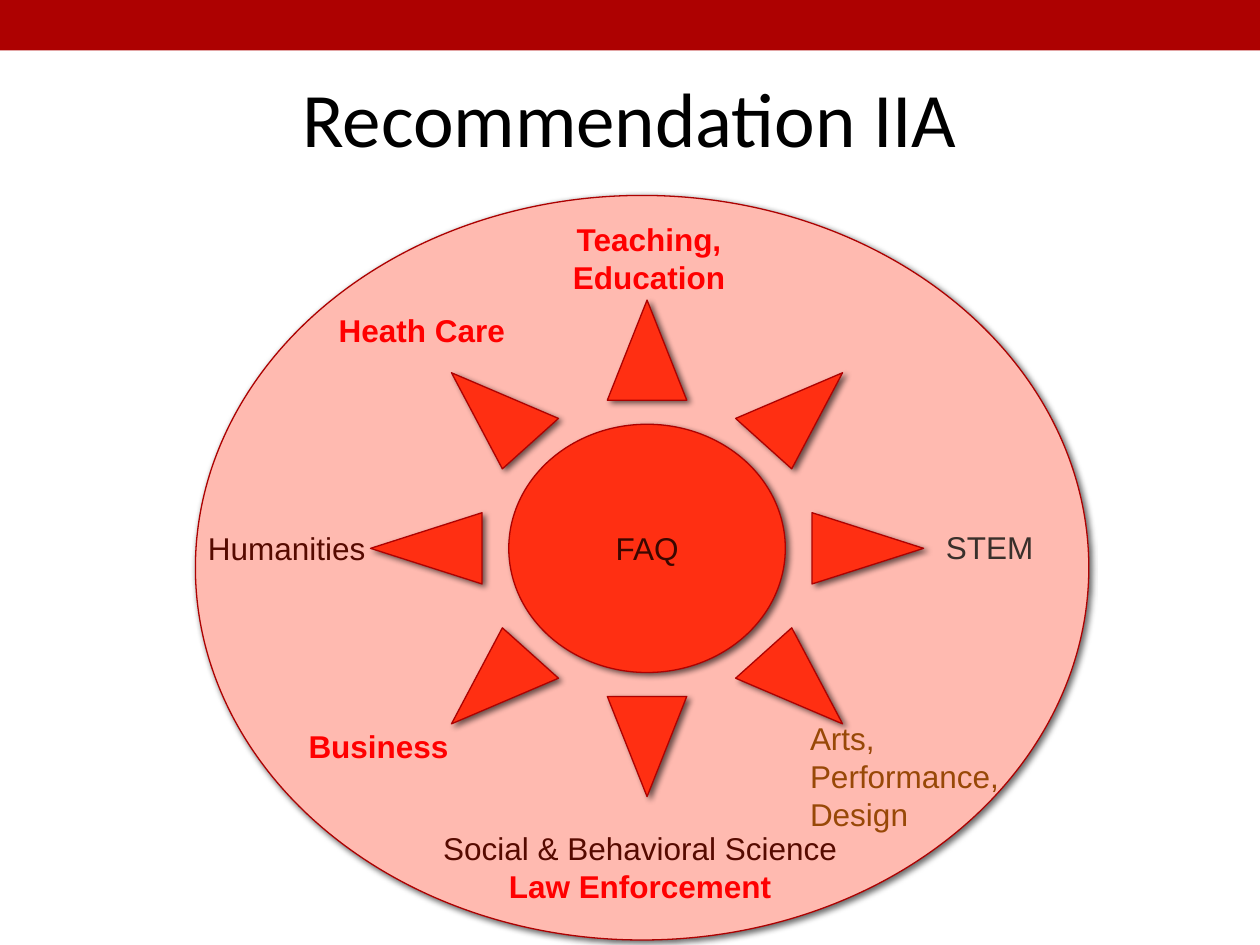
from lxml.etree import SubElement
from pptx import Presentation
from pptx.dml.color import RGBColor
from pptx.enum.shapes import MSO_SHAPE as Shape
from pptx.enum.text import MSO_ANCHOR as Anchor, MSO_AUTO_SIZE as Fit, PP_ALIGN as Align
from pptx.oxml.ns import qn
from pptx.util import Cm, Pt

BLACK = RGBColor(0x00, 0x00, 0x00)
DARK = RGBColor(0xAD, 0x01, 0x01)
PINK = RGBColor(0xFF, 0xBA, 0xB0)
FLAME = RGBColor(0xFF, 0x2F, 0x12)
RED = RGBColor(0xFF, 0x00, 0x00)
MAROON = RGBColor(0x56, 0x0A, 0x00)
DEEP = RGBColor(0x3A, 0x07, 0x00)
GRAY = RGBColor(0x39, 0x30, 0x2B)
BROWN = RGBColor(0x98, 0x48, 0x07)

TITLE = "Recommendation IIA"
# Each line: text, colour, bold
HEALTH = [("Heath Care", RED, True)]
HUB = [("FAQ", DEEP, False)]
# Place in cm (left, top, width, height), alignment, wrap, lines
LABELS = [
    ((11.28, 4.32, 3.61, 1.8), Align.CENTER, False,
     [("Teaching,", RED, True), ("Education", RED, True)]),
    ((8.64, 16.59, 8.53, 2.57), Align.CENTER, False,
     [("Social & Behavioral Science", MAROON, False),
      ("Law Enforcement", RED, True)]),
    ((5.97, 14.53, 3.35, 1.02), Align.LEFT, False, [("Business", RED, True)]),
    ((18.82, 10.52, 2.29, 1.02), Align.LEFT, False, [("STEM", GRAY, False)]),
    ((16.08, 14.38, 4.45, 2.57), Align.LEFT, True,
     [("Arts, Performance, Design", BROWN, False)]),
    ((3.94, 10.54, 3.71, 1.02), Align.LEFT, False,
     [("Humanities", MAROON, False)]),
]


def style(para, size, font, color, bold, align):
    para.alignment = align
    for run in para.runs:
        run.font.size = Pt(size)
        run.font.name = font
        run.font.bold = bold
        run.font.color.rgb = color


def write(frame, lines, align, anchor=Anchor.TOP):
    frame.text = "\n".join(text for text, _, _ in lines)
    frame.vertical_anchor = anchor
    for para, (_, color, bold) in zip(frame.paragraphs, lines):
        style(para, 18, "Arial", color, bold, align)


def add_form(slide, kind, place, fill):
    form = slide.shapes.add_shape(kind, *map(Cm, place))
    form.shadow.inherit = False
    form.fill.solid()
    form.fill.fore_color.rgb = fill
    form.line.fill.background()
    return form


def add_edge(form):
    """Give the shape a thin outline and a soft shadow at lower right."""
    form.line.color.rgb = DARK
    form.line.width = Pt(0.75)
    effects = form.fill._xPr.find(qn("a:effectLst"))
    shade = SubElement(effects, qn("a:outerShdw"), blurRad=str(Pt(3)),
                       dist=str(Pt(2)), dir=str(45 * 60000), rotWithShape="0")
    color = SubElement(shade, qn("a:srgbClr"), val=str(BLACK))
    SubElement(color, qn("a:alpha"), val="60000")


def main():
    deck = Presentation()
    deck.slide_width, deck.slide_height = Cm(25.4), Cm(19.05)
    slide = deck.slides.add_slide(deck.slide_layouts[5])

    title = slide.shapes.title
    title.left, title.top, title.width, title.height = map(
        Cm, (1.27, 0.76, 22.86, 3.18))
    title.text_frame.text = TITLE
    title.text_frame.vertical_anchor = Anchor.MIDDLE
    style(title.text_frame.paragraphs[0], 44, "Calibri", BLACK, False, Align.CENTER)

    add_form(slide, Shape.RECTANGLE, (0, 0, 25.4, 1.02), DARK)

    field = add_form(slide, Shape.OVAL, (3.94, 3.94, 18.01, 15.01), PINK)
    add_edge(field)
    write(field.text_frame, HEALTH, Align.LEFT)
    # The title lies above the field
    field._element.addnext(title._element)

    sun = add_form(slide, Shape.SUN, (7.47, 6.05, 11.15, 10.01), FLAME)
    add_edge(sun)
    write(sun.text_frame, HUB, Align.CENTER, Anchor.MIDDLE)

    for place, align, wrap, lines in LABELS:
        frame = slide.shapes.add_textbox(*map(Cm, place)).text_frame
        frame.word_wrap = wrap
        frame.auto_size = Fit.SHAPE_TO_FIT_TEXT
        write(frame, lines, align)

    deck.save("out.pptx")


if __name__ == "__main__":
    main()
